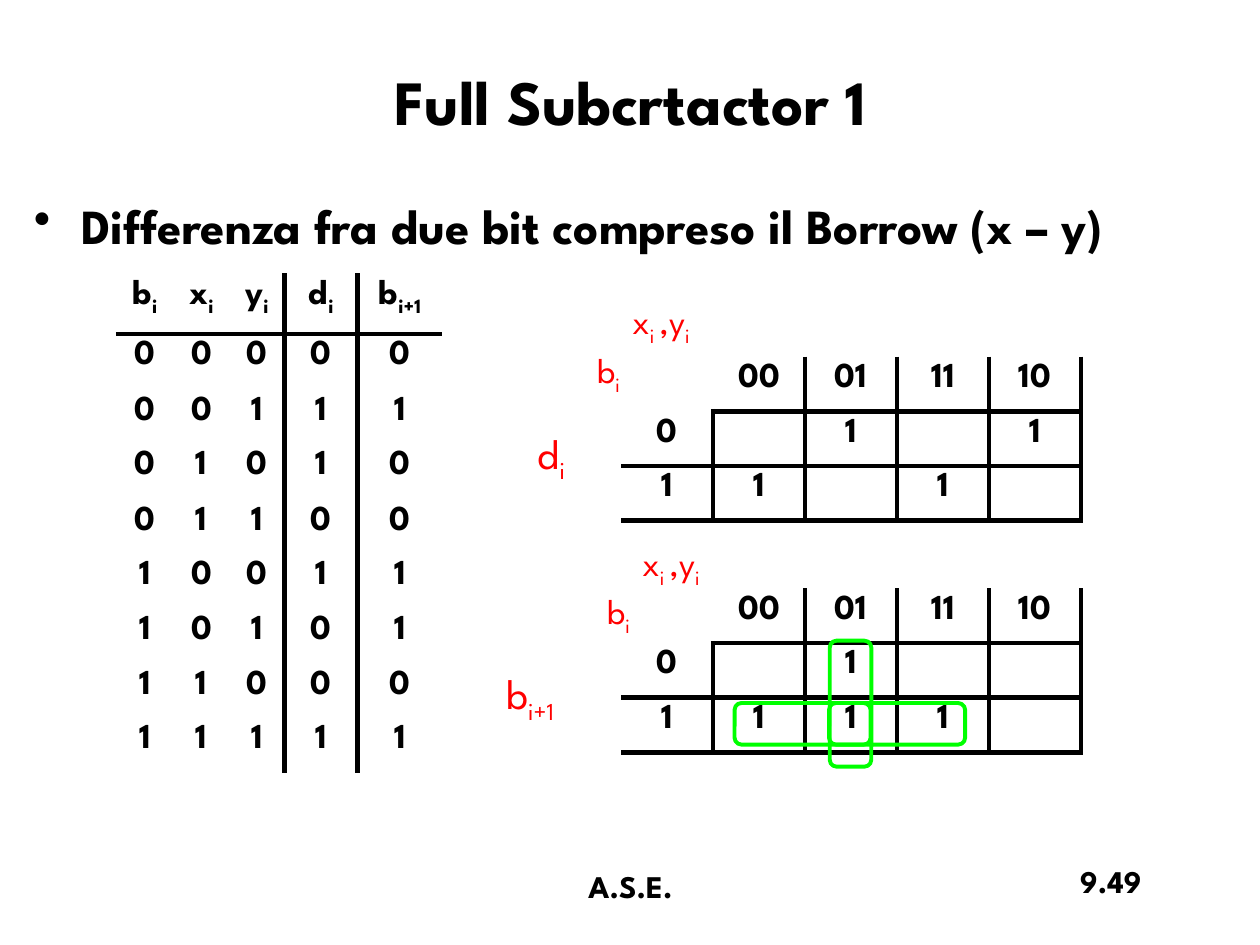
"""Build the full subtractor slide with its truth table and Karnaugh maps."""
from lxml import etree
from pptx import Presentation
from pptx.dml.color import RGBColor
from pptx.enum.shapes import MSO_SHAPE
from pptx.enum.text import MSO_ANCHOR, PP_ALIGN
from pptx.oxml.ns import qn
from pptx.util import Inches, Pt

BLACK = RGBColor(0, 0, 0)
RED = RGBColor(255, 0, 0)
GREEN = RGBColor(0, 255, 0)
WHITE = RGBColor(255, 255, 255)
FONT = "League Spartan"
LEFT, CENTER, RIGHT = PP_ALIGN.LEFT, PP_ALIGN.CENTER, PP_ALIGN.RIGHT
TOP, MIDDLE = MSO_ANCHOR.TOP, MSO_ANCHOR.MIDDLE
ROUNDED = MSO_SHAPE.ROUNDED_RECTANGLE
SUBSCRIPT = "-25000"

TITLE = "Full Subcrtactor 1"
BULLET = "Differenza fra due bit compreso il Borrow (x – y)"
B_I, X_I, Y_I, D_I = [(name, "i") for name in "bxyd"]
B_NEXT = ("b", "i+1")
INPUTS = ("x", "i ", ",y", "i")

TRUTH_HEAD = [B_I, X_I, Y_I, D_I, B_NEXT]
TRUTH_ROWS = ["00000", "00111", "01010", "01100", "10011", "10101", "11000", "11111"]
TRUTH_WIDTHS = [0.46, 0.44, 0.44, 0.58, 0.67]
TRUTH_HEIGHTS = [0.44, 0.44, 0.38, 0.44, 0.43, 0.43, 0.43, 0.43, 0.2]

MAP_HEAD = ["", "00", "01", "11", "10"]
BORROW_MAP = [MAP_HEAD, ["0", "", "1", "", ""], ["1", "1", "1", "1", ""]]
DIFFERENCE_MAP = [MAP_HEAD, ["0", "", "1", "", "1"], ["1", "1", "", "1", ""]]
MAP_WIDTHS = [0.73] * 5
MAP_HEIGHTS = [0.31] * 3

LABELS = [
    (B_I, 20, (4.64, 2.72, 0.42, 0.43)),
    (D_I, 24, (4.17, 3.34, 0.47, 0.5)),
    (B_NEXT, 24, (3.92, 5.25, 0.73, 0.5)),
    (INPUTS, 20, (4.92, 2.33, 0.73, 0.43)),
    (B_I, 20, (4.72, 4.63, 0.42, 0.43)),
    (INPUTS, 20, (5, 4.25, 0.73, 0.43)),
]
LOOPS = [
    ((6.58, 5.58, 1.08, 0.33), 0),
    ((5.83, 5.58, 1.08, 0.33), 0),
    ((6.25, 5.42, 1, 0.33), 90),
]


def write(para, parts, size, color=BLACK, bold=True, align=LEFT):
    """Write parts as runs, every second one a subscript."""
    para.alignment = align
    for index, part in enumerate(parts):
        span = para.add_run()
        span.text = part
        span.font.name = FONT
        span.font.size = Pt(size)
        span.font.bold = bold
        span.font.color.rgb = color
        if index % 2:
            span.font._element.set("baseline", SUBSCRIPT)


def add_text(page, place, parts, size, wrap=True, anchor=TOP, **style):
    """Add a text box and return its paragraph."""
    box = page.shapes.add_textbox(*map(Inches, place))
    box.text_frame.word_wrap = wrap
    box.text_frame.vertical_anchor = anchor
    para = box.text_frame.paragraphs[0]
    write(para, parts, size, **style)
    return para


def set_borders(cell, colors):
    """Draw the four cell borders, leaving out sides without a colour."""
    properties = cell._tc.get_or_add_tcPr()
    for index, side in enumerate("LRTB"):
        line = etree.Element(qn(f"a:ln{side}"), w=str(Pt(3)))
        properties.insert(index, line)
        if side in colors:
            fill = etree.SubElement(line, qn("a:solidFill"))
            etree.SubElement(fill, qn("a:srgbClr"), val=str(colors[side]))
        else:
            etree.SubElement(line, qn("a:noFill"))


def truth_borders(row, column):
    """Rule off the heading and the two output columns."""
    sides = {"L": column > 2, "R": column in (2, 3), "T": row == 1, "B": row == 0}
    return {side: BLACK for side, shown in sides.items() if shown}


def map_borders(row, column):
    """Rule every cell except along the open top, left and corner."""
    colors = {"R": BLACK, "B": BLACK}
    if column:
        colors["L"] = BLACK
    if row:
        colors["T"] = BLACK
    hidden = {(0, 0): "RB", (0, 1): "L", (1, 0): "T"}
    colors.update(dict.fromkeys(hidden.get((row, column), ""), WHITE))
    return colors


def add_grid(page, left, top, rows, widths, heights, borders):
    """Add a plain table of centred values."""
    place = map(Inches, (left, top, sum(widths), sum(heights)))
    table = page.shapes.add_table(len(rows), len(widths), *place).table
    table.first_row = table.horz_banding = False
    for column, width in zip(table.columns, widths):
        column.width = Inches(width)
    for line, height in zip(table.rows, heights):
        line.height = Inches(height)
    for row, values in enumerate(rows):
        for column, value in enumerate(values):
            cell = table.cell(row, column)
            cell.fill.background()
            set_borders(cell, borders(row, column))
            if value:
                parts = value if isinstance(value, tuple) else (value,)
                write(cell.text_frame.paragraphs[0], parts, 20, align=CENTER)


def add_loop(page, place, turn):
    """Add a green loop around a group of ones."""
    loop = page.shapes.add_shape(ROUNDED, *map(Inches, place))
    loop.shadow.inherit = False
    loop.fill.background()
    loop.line.color.rgb = GREEN
    loop.line.width = Pt(2.25)
    loop.rotation = turn


def main():
    """Lay out the slide and save it."""
    deck = Presentation()
    deck.slide_width, deck.slide_height = Inches(10), Inches(7.5)
    page = deck.slides.add_slide(deck.slide_layouts[6])

    add_text(page, (0.17, 0.17, 9.67, 1.25), [TITLE], 36, anchor=MIDDLE, align=CENTER)
    para = add_text(page, (0.17, 1.5, 9.67, 5.17), [BULLET], 28)
    para.space_before = Pt(5.6)
    properties = para._p.get_or_add_pPr()
    properties.set("marL", str(Inches(0.38)))
    properties.set("indent", str(-Inches(0.38)))
    etree.SubElement(properties, qn("a:buChar"), char="•")

    add_grid(page, 0.92, 2.17, [TRUTH_HEAD, *TRUTH_ROWS],
             TRUTH_WIDTHS, TRUTH_HEIGHTS, truth_borders)
    for top, rows in ((4.67, BORROW_MAP), (2.83, DIFFERENCE_MAP)):
        add_grid(page, 4.93, top, rows, MAP_WIDTHS, MAP_HEIGHTS, map_borders)
    for parts, size, place in LABELS:
        add_text(page, place, parts, size, wrap=False, color=RED, bold=False)
    for place, turn in LOOPS:
        add_loop(page, place, turn)

    add_text(page, (7.08, 6.79, 2.08, 0.5), ["9.49"], 18, align=RIGHT)
    add_text(page, (3.42, 6.83, 3.17, 0.5), ["A.S.E."], 18, align=CENTER)
    deck.save("out.pptx")


if __name__ == "__main__":
    main()
